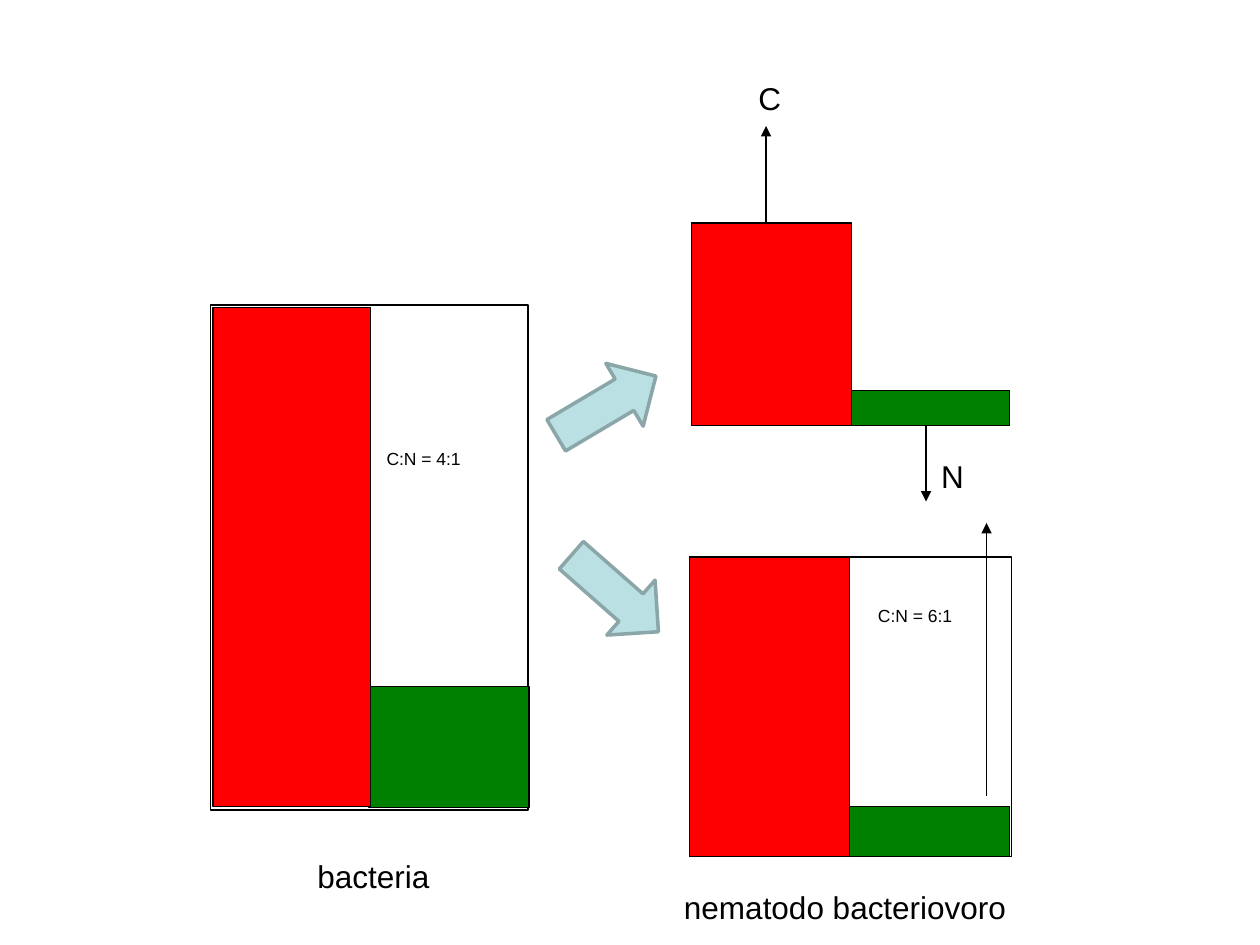
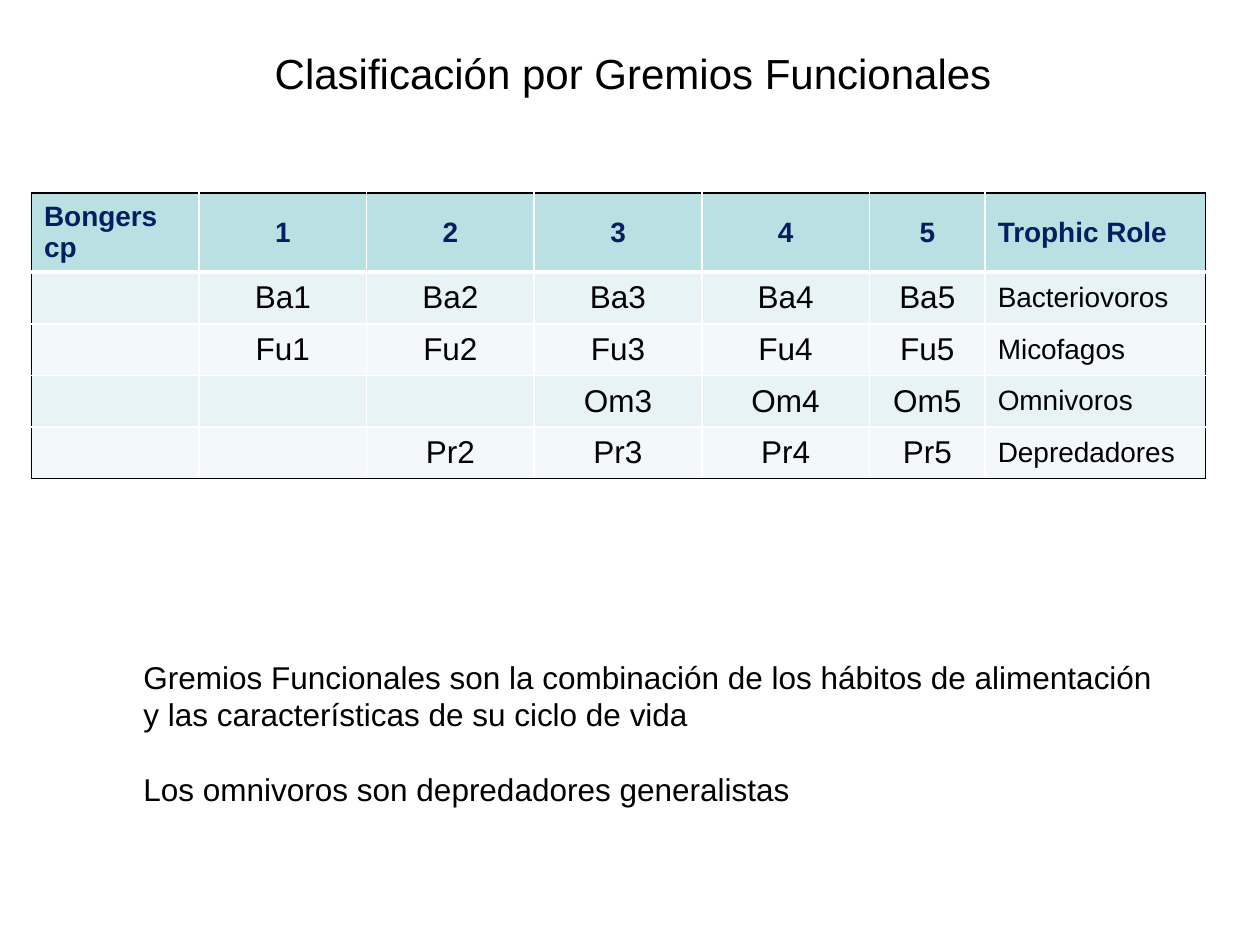
import dataclasses

import lxml.etree
import pptx
import pptx.dml.color
import pptx.enum.shapes
import pptx.enum.text
import pptx.oxml.ns
import pptx.util

Inches = pptx.util.Inches
Pt = pptx.util.Pt
qn = pptx.oxml.ns.qn
RGB = pptx.dml.color.RGBColor.from_string
MSO_SHAPE = pptx.enum.shapes.MSO_SHAPE
PP_ALIGN = pptx.enum.text.PP_ALIGN
MSO_ANCHOR = pptx.enum.text.MSO_ANCHOR
MSO_AUTO_SIZE = pptx.enum.text.MSO_AUTO_SIZE


@dataclasses.dataclass(frozen=True)
class Theme:
    font: str = "Arial"
    black: str = "000000"
    white: str = "FFFFFF"
    carbon: str = "FF0000"
    nitrogen: str = "008000"
    accent: str = "BBE0E3"
    arrow_outline: str = "8AA6A8"
    heading: str = "002060"
    bands: tuple = ("E7F3F4", "F3F9FA")
    title_size: int = 24
    body_size: int = 18
    table_size: int = 16
    ratio_size: int = 10
    thin_line: float = 0.75
    arrow_line: float = 2


theme = Theme()


def write_text(text_frame, paragraphs, size, color=theme.black, bold=False,
               align=PP_ALIGN.LEFT):
    """Fill a text frame with paragraphs that share one format."""
    font_format = {"name": theme.font, "size": Pt(size), "bold": bold}
    for index, text in enumerate(paragraphs):
        paragraph = text_frame.add_paragraph() if index else text_frame.paragraphs[0]
        paragraph.text = text
        paragraph.alignment = align
        for run in paragraph.runs:
            for name, value in font_format.items():
                setattr(run.font, name, value)
            run.font.color.rgb = RGB(color)


def add_filled_shape(shapes, preset, box, fill, outline, width):
    """Add a preset shape with a plain fill and outline and no shadow."""
    shape = shapes.add_shape(preset, *map(Inches, box))
    shape.shadow.inherit = False
    shape.fill.solid()
    shape.fill.fore_color.rgb = RGB(fill)
    shape.line.color.rgb = RGB(outline)
    shape.line.width = Pt(width)
    return shape


presentation = pptx.Presentation()
presentation.slide_width = Inches(10)
presentation.slide_height = Inches(7.5)
title_only_layout = presentation.slide_layouts[5]
blank_layout = presentation.slide_layouts[6]

# Slide 1: carbon and nitrogen in bacteria and nematode
slide = presentation.slides.add_slide(blank_layout)
diagram = slide.shapes.add_group_shape().shapes

# Frames and bars, from back to front
bars = [
    ((1.67, 2.42, 2.52, 4.01), theme.white),
    ((2.93, 5.45, 1.27, 0.96), theme.nitrogen),
    ((1.69, 2.44, 1.25, 3.96), theme.carbon),
    ((5.47, 4.42, 2.56, 2.38), theme.white),
    ((5.47, 4.42, 1.27, 2.38), theme.carbon),
    ((6.74, 6.4, 1.27, 0.4), theme.nitrogen),
    ((5.49, 1.77, 1.27, 1.61), theme.carbon),
    ((6.76, 3.1, 1.25, 0.28), theme.nitrogen),
]
for box, color in bars:
    add_filled_shape(diagram, MSO_SHAPE.RECTANGLE, box, color, theme.black, theme.thin_line)

# Vertical flow arrows: x, start y, end y
for x, start_y, end_y in [(6.08, 1.77, 1), (7.35, 3.38, 3.98), (7.83, 6.32, 4.15)]:
    connector = diagram.add_connector(
        pptx.enum.shapes.MSO_CONNECTOR.STRAIGHT,
        Inches(x), Inches(start_y), Inches(x), Inches(end_y))
    connector.line.color.rgb = RGB(theme.black)
    connector.line.width = Pt(theme.thin_line)
    properties = connector._element.spPr
    lxml.etree.SubElement(properties.find(qn("a:ln")), qn("a:tailEnd"), type="triangle")
    lxml.etree.SubElement(properties, qn("a:effectLst"))

# C:N ratios
for left, top, ratio in [(2.97, 3.51, "C:N = 4:1"), (6.87, 4.75, "C:N = 6:1")]:
    text_box = diagram.add_textbox(Inches(left), Inches(top), Inches(1.17), Inches(1.61))
    text_box.text_frame.word_wrap = True
    write_text(text_box.text_frame, [ratio], theme.ratio_size)

# Block arrows from bacteria to nematode
for left, top, rotation in [(4.35, 2.93, 329.3), (4.42, 4.42, 41.3)]:
    block_arrow = add_filled_shape(
        slide.shapes, MSO_SHAPE.RIGHT_ARROW, (left, top, 0.92, 0.58),
        theme.accent, theme.arrow_outline, theme.arrow_line)
    block_arrow.rotation = rotation

# Labels
labels = [
    ("bacteria", 2.42, 6.75, 1.1),
    ("nematodo bacteriovoro", 5.33, 7, 2.82),
    ("C", 5.92, 0.58, 0.38),
    ("N", 7.37, 3.58, 0.38),
]
for text, left, top, width in labels:
    text_box = slide.shapes.add_textbox(Inches(left), Inches(top), Inches(width), Inches(0.4))
    text_box.text_frame.word_wrap = False
    write_text(text_box.text_frame, [text], theme.body_size)

# Slide 2: functional guilds
slide = presentation.slides.add_slide(title_only_layout)
title = slide.shapes.title
title_place = {"left": 2.08, "top": 0.33, "width": 5.95, "height": 0.5}
for name, value in title_place.items():
    setattr(title, name, Inches(value))
title_format = {"word_wrap": False, "auto_size": MSO_AUTO_SIZE.NONE,
                "vertical_anchor": MSO_ANCHOR.TOP}
for name, value in title_format.items():
    setattr(title.text_frame, name, value)
write_text(title.text_frame, ["Clasificación por Gremios Funcionales"], theme.title_size)

# Guild table: prefix, first and last cp class, trophic role
guilds = [
    ("Ba", 1, 5, "Bacteriovoros"),
    ("Fu", 1, 5, "Micofagos"),
    ("Om", 3, 5, "Omnivoros"),
    ("Pr", 2, 5, "Depredadores"),
]
rows = [["Bongers cp", "1", "2", "3", "4", "5", "Trophic Role"]]
for prefix, first, last, role in guilds:
    classes = [f"{prefix}{cp}" if first <= cp <= last else "" for cp in range(1, 6)]
    rows.append(["", *classes, role])

column_widths = [1.33] * 5 + [0.92, 1.75]
row_heights = [0.63] + [0.41] * len(guilds)
last_row, last_column = len(rows) - 1, len(column_widths) - 1
table = slide.shapes.add_table(
    len(rows), len(column_widths), Inches(0.25), Inches(1.53),
    Inches(sum(column_widths)), Inches(sum(row_heights))).table
table.horz_banding = False
for column, width in zip(table.columns, column_widths):
    column.width = Inches(width)
for row, height in zip(table.rows, row_heights):
    row.height = Inches(height)

for row_index, row in enumerate(rows):
    is_header = row_index == 0
    for column_index, text in enumerate(row):
        cell = table.cell(row_index, column_index)
        cell.vertical_anchor = MSO_ANCHOR.MIDDLE
        is_class = 0 < column_index < last_column
        write_text(
            cell.text_frame, [text],
            theme.body_size if is_class and not is_header else theme.table_size,
            theme.heading if is_header else theme.black, is_header,
            PP_ALIGN.CENTER if is_class else PP_ALIGN.LEFT)

        # Black outer edges, white inner edges, heavy rule under the header
        edges = [
            ("a:lnL", column_index == 0, 1),
            ("a:lnR", column_index == last_column, 1),
            ("a:lnT", is_header, 3 if row_index == 1 else 1),
            ("a:lnB", row_index == last_row, 3 if is_header else 1),
        ]
        cell_properties = cell._tc.get_or_add_tcPr()
        for tag, is_outer, width in edges:
            edge = lxml.etree.SubElement(cell_properties, qn(tag), w=str(Pt(width)))
            edge_fill = lxml.etree.SubElement(edge, qn("a:solidFill"))
            lxml.etree.SubElement(edge_fill, qn("a:srgbClr"),
                                  val=theme.black if is_outer else theme.white)
        cell.fill.solid()
        cell.fill.fore_color.rgb = RGB(
            theme.accent if is_header else theme.bands[(row_index - 1) % 2])

# Explanation
explanation = slide.shapes.add_textbox(Inches(1.04), Inches(5.17), Inches(8.21), Inches(1.31))
explanation.text_frame.word_wrap = False
write_text(explanation.text_frame, [
    "Gremios Funcionales son la combinación de los hábitos de alimentación\n"
    "y las características de su ciclo de vida",
    "Los omnivoros son depredadores generalistas",
], theme.body_size)
explanation.text_frame.paragraphs[1].space_before = Pt(21)

presentation.save("out.pptx")
